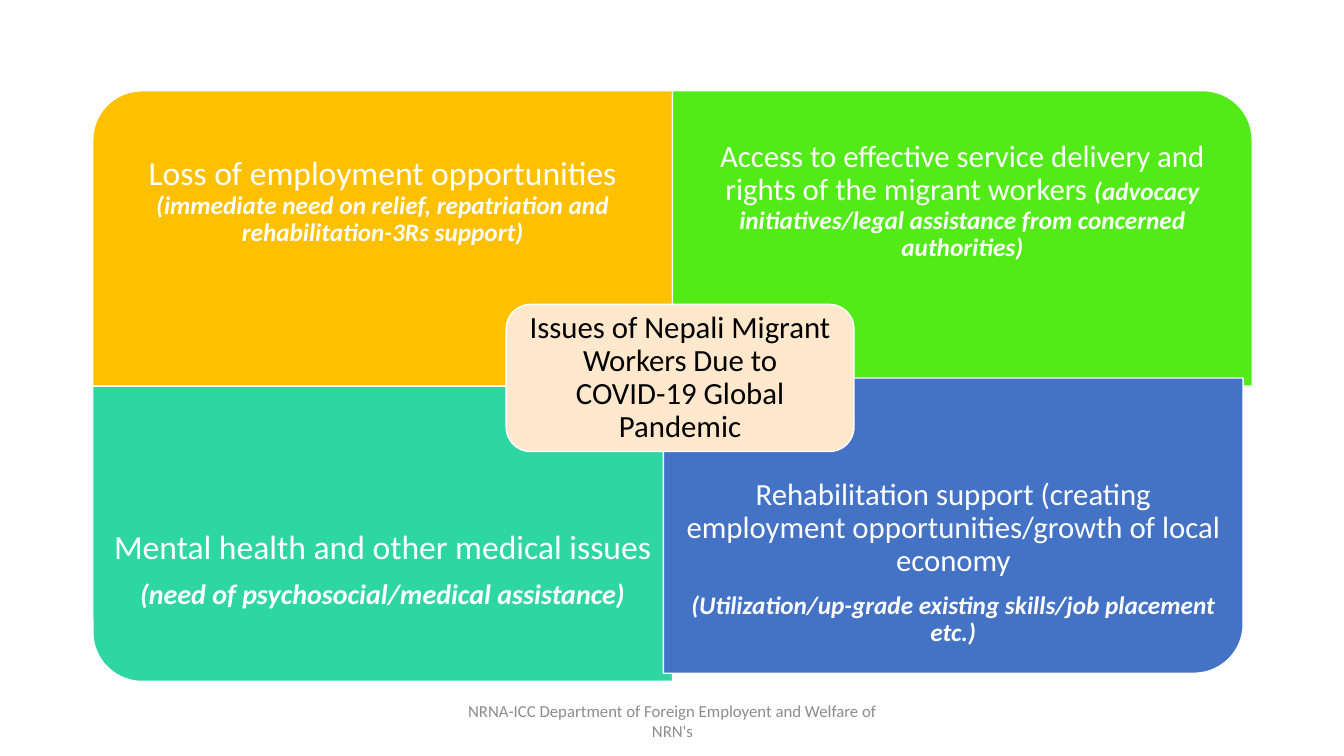
import pptx
import pptx.dml.color
import pptx.enum.shapes
import pptx.enum.text
import pptx.util

COLORS = {
    "amber": "FFC000",
    "green": "53EB17",
    "teal": "2ED7A1",
    "blue": "4472C4",
    "peach": "FFE8CC",
    "white": "FFFFFF",
    "black": "000000",
    "gray": "8C8C8C",
}
Inches = pptx.util.Inches
Pt = pptx.util.Pt

GRID_LEFT, GRID_TOP = 0.92, 0.9
COLUMN_WIDTH, ROW_HEIGHT = 5.75, 2.93
TEXT_HEIGHT = 0.75 * ROW_HEIGHT

# column, row, shift, rotation, color, inset, paragraphs of (text, size, emphasis) runs
PANELS = [
    (0, 0, (0, 0), 270, "amber", 0.19, [
        [("Loss of employment opportunities ", 24, False),
         ("(immediate need on relief, repatriation and rehabilitation-3Rs support)", 18, True)]]),
    (1, 0, (0, 0), 0, "green", 0.17, [
        [("Access to effective service delivery and rights of the migrant workers ", 22, False),
         ("(advocacy initiatives/legal assistance from concerned authorities)", 18, True)]]),
    (0, 1, (0, 0), 180, "teal", 0.19, [
        [("Mental health and other medical issues", 24, False)],
        [("(need of psychosocial/medical assistance)", 20, True)]]),
    (1, 1, (-0.09, -0.08), 90, "blue", 0.17, [
        [("Rehabilitation support (creating employment opportunities/growth of local economy",
          22, False)],
        [("(Utilization/up-grade existing skills/job placement etc.)", 18, True)]]),
]


def rgb(name):
    return pptx.dml.color.RGBColor.from_string(COLORS[name])


def add_run(paragraph, text, size=22, color="white", emphasis=False):
    run = paragraph.add_run()
    run.text = text
    font = run.font
    font.name = "Calibri"
    font.size = Pt(size)
    font.bold = font.italic = emphasis
    font.color.rgb = rgb(color)


class SlideBuilder:
    def __init__(self, slide):
        self.slide = slide

    def block(self, left, top, width, height, kind, color, rotation=0):
        """Add a filled shape whose box is given as it appears after rotation."""
        if rotation % 180:
            left, top = left + (width - height) / 2, top + (height - width) / 2
            width, height = height, width
        shape = self.slide.shapes.add_shape(
            kind, Inches(left), Inches(top), Inches(width), Inches(height))
        shape.rotation = rotation
        shape.shadow.inherit = False
        shape.fill.solid()
        shape.fill.fore_color.rgb = rgb(color)
        shape.line.color.rgb = rgb("white")
        shape.line.width = Pt(1)

    def text(self, left, top, width, height, paragraphs, inset=(0.1, 0.05),
             line_spacing=0.9, color="white", holder=None):
        """Fill the holder, or a new text box, with paragraphs of runs."""
        box = holder or self.slide.shapes.add_textbox(0, 0, 0, 0)
        box.left, box.top = Inches(left), Inches(top)
        box.width, box.height = Inches(width), Inches(height)
        frame = box.text_frame
        frame.word_wrap = True
        frame.auto_size = pptx.enum.text.MSO_AUTO_SIZE.NONE
        frame.vertical_anchor = pptx.enum.text.MSO_ANCHOR.MIDDLE
        frame.margin_left = frame.margin_right = Inches(inset[0])
        frame.margin_top = frame.margin_bottom = Inches(inset[1])
        for index, runs in enumerate(paragraphs):
            paragraph = frame.add_paragraph() if index else frame.paragraphs[0]
            paragraph.alignment = pptx.enum.text.PP_ALIGN.CENTER
            paragraph.line_spacing = line_spacing
            if index < len(paragraphs) - 1:
                paragraph.space_after = Pt(10)
            for text, size, emphasis in runs:
                add_run(paragraph, text, size=size, color=color, emphasis=emphasis)

    def panel(self, column, row, shift, rotation, color, inset, paragraphs):
        left = GRID_LEFT + column * COLUMN_WIDTH + shift[0]
        top = GRID_TOP + row * ROW_HEIGHT + shift[1]
        self.block(left, top, COLUMN_WIDTH, ROW_HEIGHT,
                   pptx.enum.shapes.MSO_SHAPE.ROUND_1_RECTANGLE, color, rotation)
        text_top = top + row * (ROW_HEIGHT - TEXT_HEIGHT)
        self.text(left, text_top, COLUMN_WIDTH, TEXT_HEIGHT, paragraphs, (inset, inset))

    def hub(self, title_text):
        """Add the central box and bring the slide title in front of it."""
        left, top, width, height, edge = 5.02, 3.02, 3.45, 1.46, 0.07
        self.block(left, top, width, height,
                   pptx.enum.shapes.MSO_SHAPE.ROUNDED_RECTANGLE, "peach")
        title = self.slide.shapes.title
        self.text(left + edge, top + edge, width - 2 * edge, height - 2 * edge,
                  [[(title_text, 22, False)]], (0.09, 0.09), color="black", holder=title)
        title.element.getparent().append(title.element)


def main():
    presentation = pptx.Presentation()
    presentation.slide_width = Inches(13.33)
    presentation.slide_height = Inches(7.5)
    title_only = presentation.slide_layouts[5]
    builder = SlideBuilder(presentation.slides.add_slide(title_only))
    for panel in PANELS:
        builder.panel(*panel)
    builder.hub("Issues of Nepali Migrant Workers Due to COVID-19 Global Pandemic")
    builder.text(4.42, 6.95, 4.5, 0.4,
                 [[("NRNA-ICC Department of Foreign Employent and Welfare of NRN's", 12, False)]],
                 line_spacing=1.0, color="gray")
    presentation.save("out.pptx")


if __name__ == "__main__":
    main()
